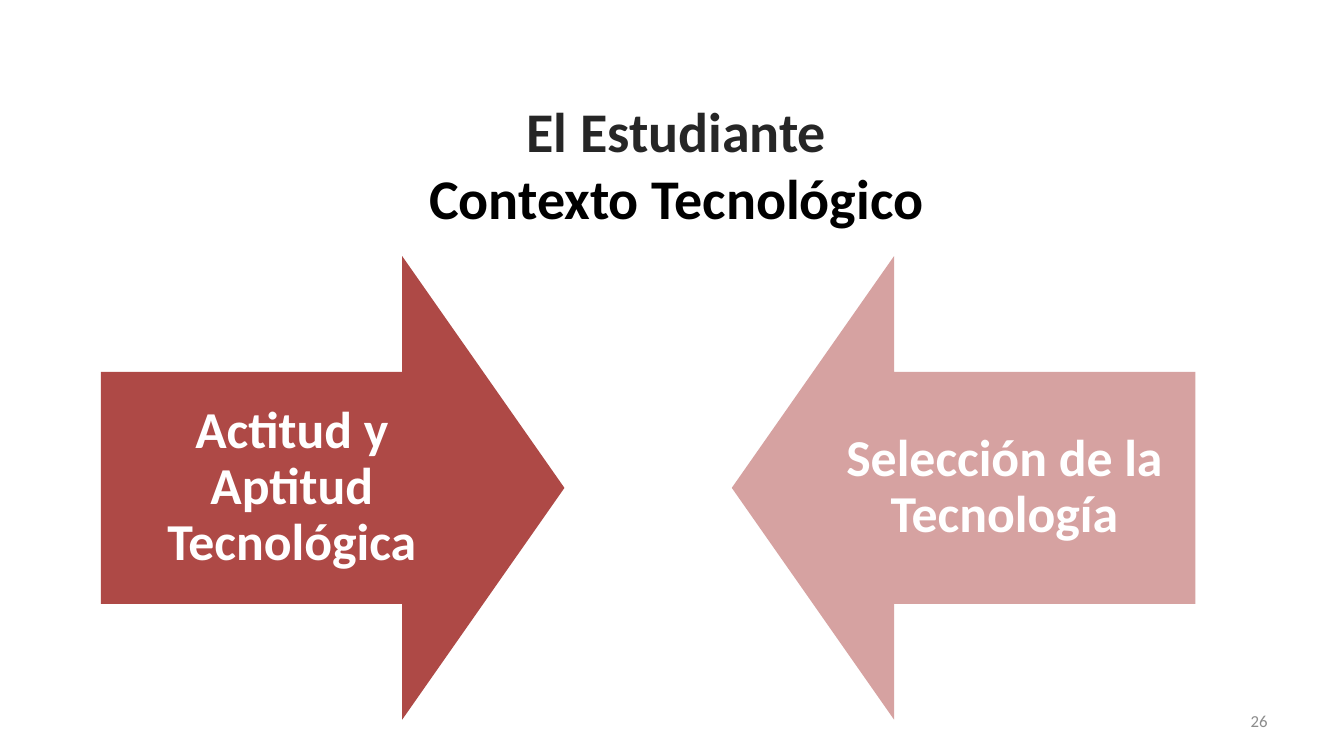
"""Build the slide on the student's technological context."""
from pptx import Presentation
from pptx.dml.color import RGBColor
from pptx.enum.shapes import MSO_SHAPE
from pptx.enum.text import MSO_ANCHOR, PP_ALIGN
from pptx.util import Pt


def color(hex_string):
    return RGBColor.from_string(hex_string)


def write(paragraph, text, size, fill, bold=False, font="Calibri"):
    run = paragraph.add_run()
    run.text = text
    run.font.name = font
    run.font.size = Pt(size)
    run.font.bold = bold
    run.font.color.rgb = color(fill)


class ContextSlide:
    WHITE, BLACK, CHARCOAL, GRAY = "FFFFFF", "000000", "262626", "8C8C8C"
    RED, PINK = "AE4946", "D6A2A1"
    ARROW_SIDE = 331.2
    ARROW_TOP = 182.9
    LABEL_WIDTH = 272.9
    LABEL_INSET = 20.9

    def __init__(self, presentation):
        self.slide = presentation.slides.add_slide(presentation.slide_layouts[6])

    def text_area(self, left, top, width, height, align, inset=None):
        box = self.slide.shapes.add_textbox(Pt(left), Pt(top), Pt(width), Pt(height))
        frame = box.text_frame
        frame.word_wrap = True
        frame.vertical_anchor = MSO_ANCHOR.MIDDLE
        if inset is not None:
            frame.margin_left = frame.margin_right = Pt(inset)
            frame.margin_top = frame.margin_bottom = Pt(inset)
        paragraph = frame.paragraphs[0]
        paragraph.alignment = align
        return paragraph

    def title(self, subject, topic):
        heading = self.text_area(51.1, 72, 864, 90, PP_ALIGN.CENTER)
        write(heading, subject, size=40, fill=self.CHARCOAL, bold=True)
        heading.add_line_break()
        write(heading, topic, size=40, fill=self.BLACK, bold=True)

    def arrow(self, label, left, rotation, fill, label_shift=0):
        side = self.ARROW_SIDE
        arrow = self.slide.shapes.add_shape(
            MSO_SHAPE.DOWN_ARROW, Pt(left), Pt(self.ARROW_TOP), Pt(side), Pt(side))
        arrow.rotation = rotation
        arrow.adjustments[0] = 0.5
        arrow.adjustments[1] = 0.35
        arrow.shadow.inherit = False
        arrow.fill.solid()
        arrow.fill.fore_color.rgb = color(fill)
        arrow.line.fill.background()
        caption = self.text_area(left + label_shift, self.ARROW_TOP + side / 4,
                                 self.LABEL_WIDTH, side / 2, PP_ALIGN.CENTER,
                                 self.LABEL_INSET)
        caption.line_spacing = 0.9
        write(caption, label, size=37, fill=self.WHITE, bold=True)

    def page_number(self, number):
        footer = self.text_area(688.5, 500.5, 224, 28.75, PP_ALIGN.RIGHT)
        write(footer, number, size=12, fill=self.GRAY)


def main():
    presentation = Presentation()
    presentation.slide_width = Pt(960)
    presentation.slide_height = Pt(540)
    context = ContextSlide(presentation)
    context.title("El Estudiante", "Contexto Tecnológico")
    context.arrow("Actitud y Aptitud Tecnológica", 72, 270, context.RED)
    context.arrow("Selección de la Tecnología", 522.7, 90, context.PINK,
                  label_shift=context.ARROW_SIDE - context.LABEL_WIDTH)
    context.page_number("26")
    presentation.save("out.pptx")


if __name__ == "__main__":
    main()
